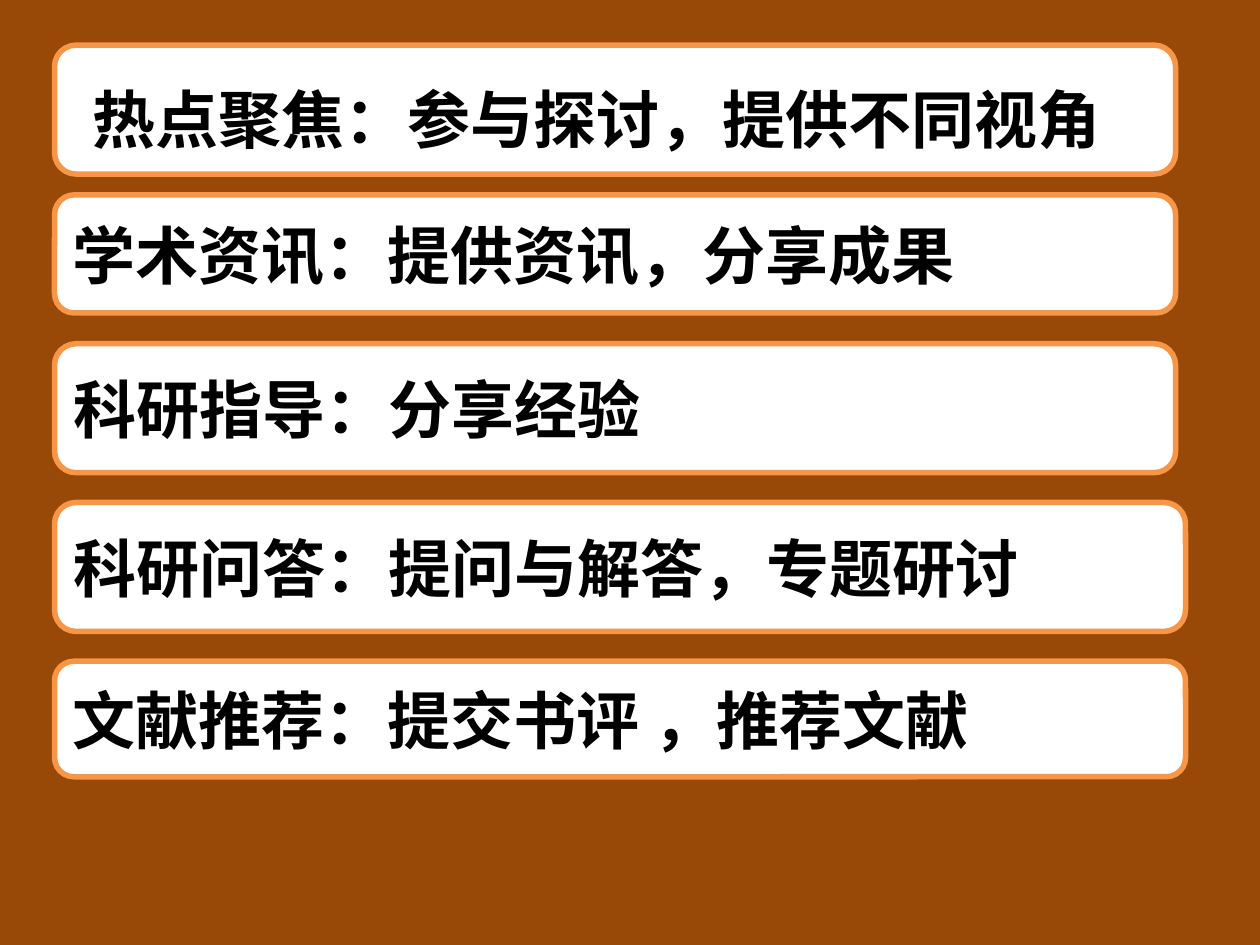
from pptx import Presentation
from pptx.dml.color import RGBColor
from pptx.enum.shapes import MSO_SHAPE
from pptx.enum.text import MSO_ANCHOR, PP_ALIGN
from pptx.util import Cm, Pt

ROUNDED = MSO_SHAPE.ROUNDED_RECTANGLE
LEFT, MIDDLE = PP_ALIGN.LEFT, MSO_ANCHOR.MIDDLE
BLANK_LAYOUT = 6

COLORS = {"background": "984807", "panel": "FFFFFF", "border": "F79646", "text": "000000"}


def add_text(paragraph, text, size=36, color="text", font="Calibri", bold=True):
    run = paragraph.add_run()
    run.text = text
    run.font.name = font
    run.font.size = Pt(size)
    run.font.bold = bold
    run.font.color.rgb = RGBColor.from_string(COLORS[color])


prs = Presentation()
prs.slide_width, prs.slide_height = Cm(25.4), Cm(19.05)
slide = prs.slides.add_slide(prs.slide_layouts[BLANK_LAYOUT])
slide.background.fill.solid()
slide.background.fill.fore_color.rgb = RGBColor.from_string(COLORS["background"])

# Top, width and height in cm, then the runs as (text, size)
sections = [
    (0.91, 22.6, 2.6, [(" ", 48), ("热点聚焦：参与探讨，提供不同视角", 36)]),
    (3.93, 22.6, 2.38, [("学术资讯：提供资讯，分享成果", 36)]),
    (6.93, 22.6, 2.6, [("科研指导：分享经验", 36)]),
    (10.13, 22.8, 2.6, [("科研问答：提问与解答，专题研讨", 36)]),
    (13.33, 22.8, 2.33, [("文献推荐：提交书评 ，推荐文献", 36)]),
]

for top, width, height, runs in sections:
    section = slide.shapes.add_shape(ROUNDED, Cm(1.1), Cm(top), Cm(width), Cm(height))
    section.shadow.inherit = False
    section.fill.solid()
    section.fill.fore_color.rgb = RGBColor.from_string(COLORS["panel"])
    section.line.color.rgb = RGBColor.from_string(COLORS["border"])
    section.line.width = Pt(3.15)
    section.text_frame.word_wrap = True
    section.text_frame.vertical_anchor = MIDDLE
    heading = section.text_frame.paragraphs[0]
    heading.alignment = LEFT
    for text, size in runs:
        add_text(heading, text, size=size)

prs.save("out.pptx")
